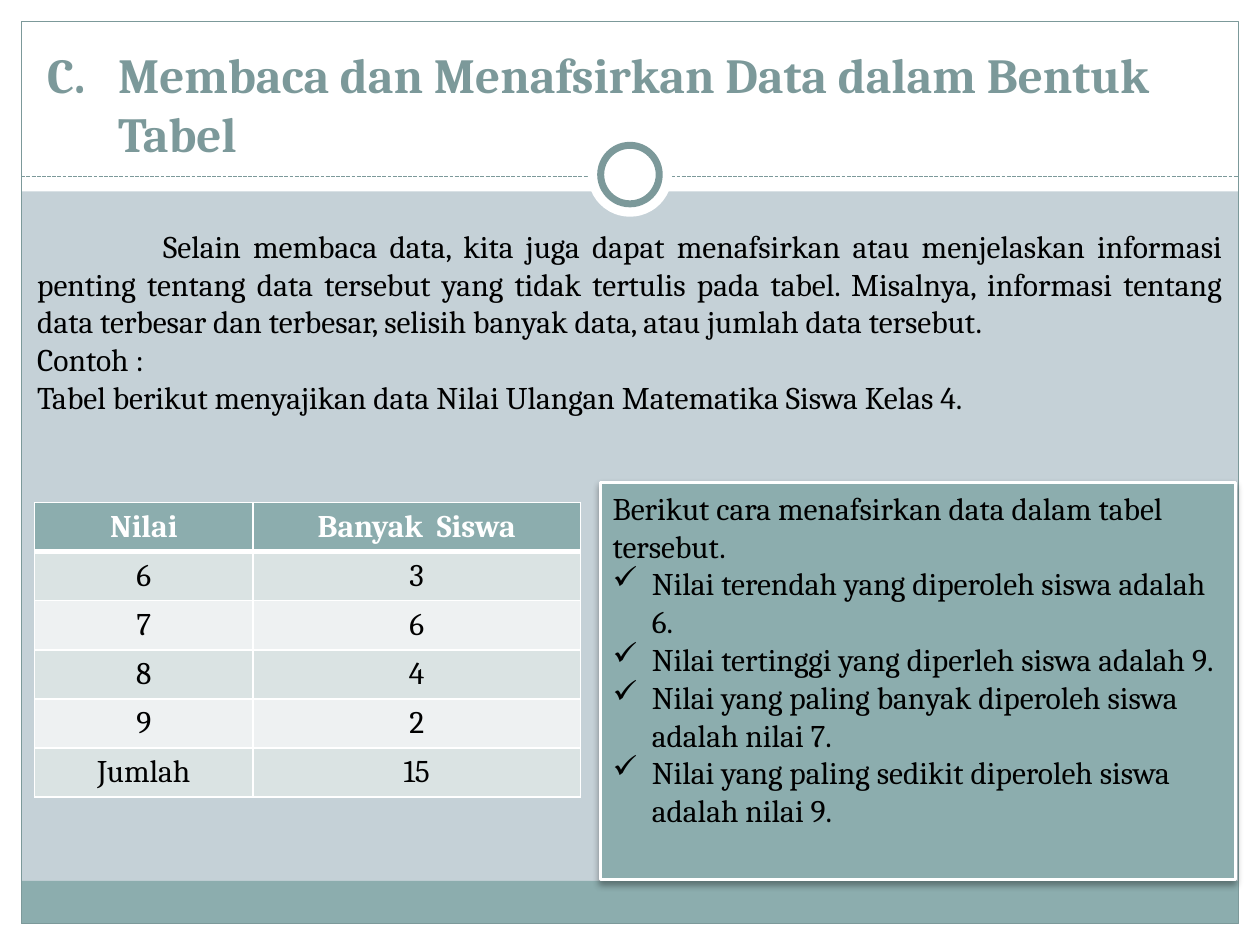
import pptx
import pptx.dml.color
import pptx.enum.shapes
import pptx.enum.text
import pptx.oxml
import pptx.oxml.ns
import pptx.util
import lxml.etree

Cm, Pt = pptx.util.Cm, pptx.util.Pt
SHAPE = pptx.enum.shapes.MSO_SHAPE
ALIGN = pptx.enum.text.PP_ALIGN
ANCHOR = pptx.enum.text.MSO_ANCHOR
qn = pptx.oxml.ns.qn

# Content
TITLE = "Membaca dan Menafsirkan Data dalam Bentuk Tabel"
INTRO = [
    "Selain membaca data, kita juga dapat menafsirkan atau menjelaskan informasi "
    "penting tentang data tersebut yang tidak tertulis pada tabel. Misalnya, "
    "informasi tentang data terbesar dan terbesar, selisih banyak data, atau "
    "jumlah data tersebut.",
    "Contoh :",
    "Tabel berikut menyajikan data Nilai Ulangan Matematika Siswa Kelas 4.",
]
SCORES = [
    ("Nilai", "Banyak  Siswa"),
    ("6", "3"),
    ("7", "6"),
    ("8", "4"),
    ("9", "2"),
    ("Jumlah", "15"),
]
READING_LEAD = "Berikut cara menafsirkan data dalam tabel tersebut."
READINGS = [
    "Nilai terendah yang diperoleh siswa adalah 6.",
    "Nilai tertinggi yang diperleh siswa adalah 9.",
    "Nilai yang paling banyak diperoleh siswa adalah nilai 7.",
    "Nilai yang paling sedikit diperoleh siswa adalah nilai 9.",
]

THEME = {
    "font": "Cambria", "title_size": 28, "body_size": 18,
    "background": "C5D1D7", "white": "FFFFFF", "text": "000000",
    "accent": "8CADAE", "dark": "7C999A", "bands": ("DAE3E3", "EEF1F2"),
}

# Page measures in centimetres
WIDTH, HEIGHT, EDGE = 25.4, 19.05, 0.43
RULE_Y, HEADER_H, FOOTER_H = 3.56, 3.86, 0.86
COLUMNS, ROW_H = (4.4, 6.6), 0.99


def rgb(name):
    return pptx.dml.color.RGBColor.from_string(THEME.get(name, name))


def add_box(kind, box, fill=None, line=None, width=0.75):
    shape = slide.shapes.add_shape(kind, *map(Cm, box))
    shape.shadow.inherit = False
    if fill:
        shape.fill.solid()
        shape.fill.fore_color.rgb = rgb(fill)
    else:
        shape.fill.background()
    if line:
        shape.line.color.rgb = rgb(line)
        shape.line.width = Pt(width)
    else:
        shape.line.fill.background()
    return shape


def write(frame, texts, color="text", size="body_size", bold=False, align=ALIGN.LEFT):
    frame.word_wrap = True
    frame.text = "\n".join(texts)
    for paragraph in frame.paragraphs:
        paragraph.alignment = align
        for run in paragraph.runs:
            run.font.name = THEME["font"]
            run.font.size = Pt(THEME[size])
            run.font.bold = bold
            run.font.color.rgb = rgb(color)


def indent(paragraph, margin, first, tag=None, **bullet):
    props = paragraph._p.get_or_add_pPr()
    props.set("marL", str(Cm(margin)))
    props.set("indent", str(Cm(first)))
    if tag:
        lxml.etree.SubElement(props, qn(tag), **bullet)


def add_borders(cell, widths):
    props = cell._tc.get_or_add_tcPr()
    for position, (side, width) in enumerate(widths.items()):
        props.insert(position, pptx.oxml.parse_xml(
            f'<a:{side} {pptx.oxml.ns.nsdecls("a")} w="{Pt(width)}"><a:solidFill>'
            f'<a:srgbClr val="{THEME["white"]}"/></a:solidFill></a:{side}>'))


deck = pptx.Presentation()
deck.slide_width, deck.slide_height = Cm(WIDTH), Cm(HEIGHT)
slide = deck.slides.add_slide(deck.slide_layouts[6])
slide.background.fill.solid()
slide.background.fill.fore_color.rgb = rgb("background")

# White margins and header, footer band, frame
inner_w, inner_h = WIDTH - 2 * EDGE, HEIGHT - 2 * EDGE
for margin in [
    (0, HEIGHT - EDGE, WIDTH, EDGE),
    (0, 0, WIDTH, HEADER_H),
    (0, 0, EDGE, HEIGHT),
    (WIDTH - EDGE, 0, EDGE, HEIGHT),
]:
    add_box(SHAPE.RECTANGLE, margin, "white")
add_box(SHAPE.RECTANGLE, (EDGE, HEIGHT - EDGE - FOOTER_H, inner_w, FOOTER_H), "accent")
add_box(SHAPE.RECTANGLE, (EDGE, EDGE, inner_w, inner_h), line="dark")

# Dashed rule with the ring at its centre
rule = slide.shapes.add_connector(
    pptx.enum.shapes.MSO_CONNECTOR.STRAIGHT,
    Cm(EDGE), Cm(RULE_Y), Cm(WIDTH - EDGE), Cm(RULE_Y))
rule.line.color.rgb = rgb("dark")
rule.line.width = Pt(0.75)
rule.line.dash_style = pptx.enum.dml.MSO_LINE.SQUARE_DOT
lxml.etree.SubElement(rule._element.spPr, qn("a:effectLst"))
RING_Y = 3.52
for diameter, outline in [(1.7, None), (1.18, "dark")]:
    add_box(SHAPE.OVAL, (WIDTH / 2 - diameter / 2, RING_Y - diameter / 2,
                         diameter, diameter), "white", outline, 4)

# Score table
table = slide.shapes.add_table(
    len(SCORES), len(COLUMNS), Cm(0.7), Cm(10.13),
    Cm(sum(COLUMNS)), Cm(ROW_H * len(SCORES))).table
for column, width in zip(table.columns, COLUMNS):
    column.width = Cm(width)
for r, row in enumerate(SCORES):
    table.rows[r].height = Cm(ROW_H)
    heading = r == 0
    for c, value in enumerate(row):
        cell = table.cell(r, c)
        write(cell.text_frame, [value], "white" if heading else "text",
              bold=heading, align=ALIGN.CENTER)
        cell.fill.solid()
        cell.fill.fore_color.rgb = rgb("accent" if heading else THEME["bands"][(r - 1) % 2])
        add_borders(cell, {"lnL": 1, "lnR": 1, "lnT": 3 if r == 1 else 1,
                           "lnB": 3 if heading else 1})

# Panel explaining how to read the table
panel = add_box(SHAPE.PENTAGON, (12.1, 9.73, 12.8, 8), "accent", "white", 1.57)
panel.adjustments[0] = 0
panel.text_frame.vertical_anchor = ANCHOR.TOP
write(panel.text_frame, [READING_LEAD, *READINGS])
for reading in panel.text_frame.paragraphs[1:]:
    indent(reading, 0.79, -0.79, "a:buChar", char="✓")
effects = panel._element.spPr.find(qn("a:effectLst"))
shadow = lxml.etree.SubElement(
    effects, qn("a:outerShdw"), blurRad=str(Pt(4)), dist=str(Pt(2)),
    dir="5400000", rotWithShape="0")
shade = lxml.etree.SubElement(shadow, qn("a:srgbClr"), val=THEME["text"])
lxml.etree.SubElement(shade, qn("a:alpha"), val="35000")

# Introduction
intro = slide.shapes.add_textbox(Cm(0.5), Cm(4.45), Cm(24.4), Cm(4.88)).text_frame
write(intro, INTRO, align=ALIGN.JUSTIFY)
indent(intro.paragraphs[0], 0, 2.54)

# Title, numbered C.
title = slide.shapes.add_textbox(Cm(0.7), Cm(0.63), Cm(24), Cm(2.9)).text_frame
title.vertical_anchor = ANCHOR.MIDDLE
write(title, [TITLE], "dark", "title_size", bold=True)
indent(title.paragraphs[0], 1.43, -1.43, "a:buAutoNum", type="alphaUcPeriod", startAt="3")

deck.save("out.pptx")
